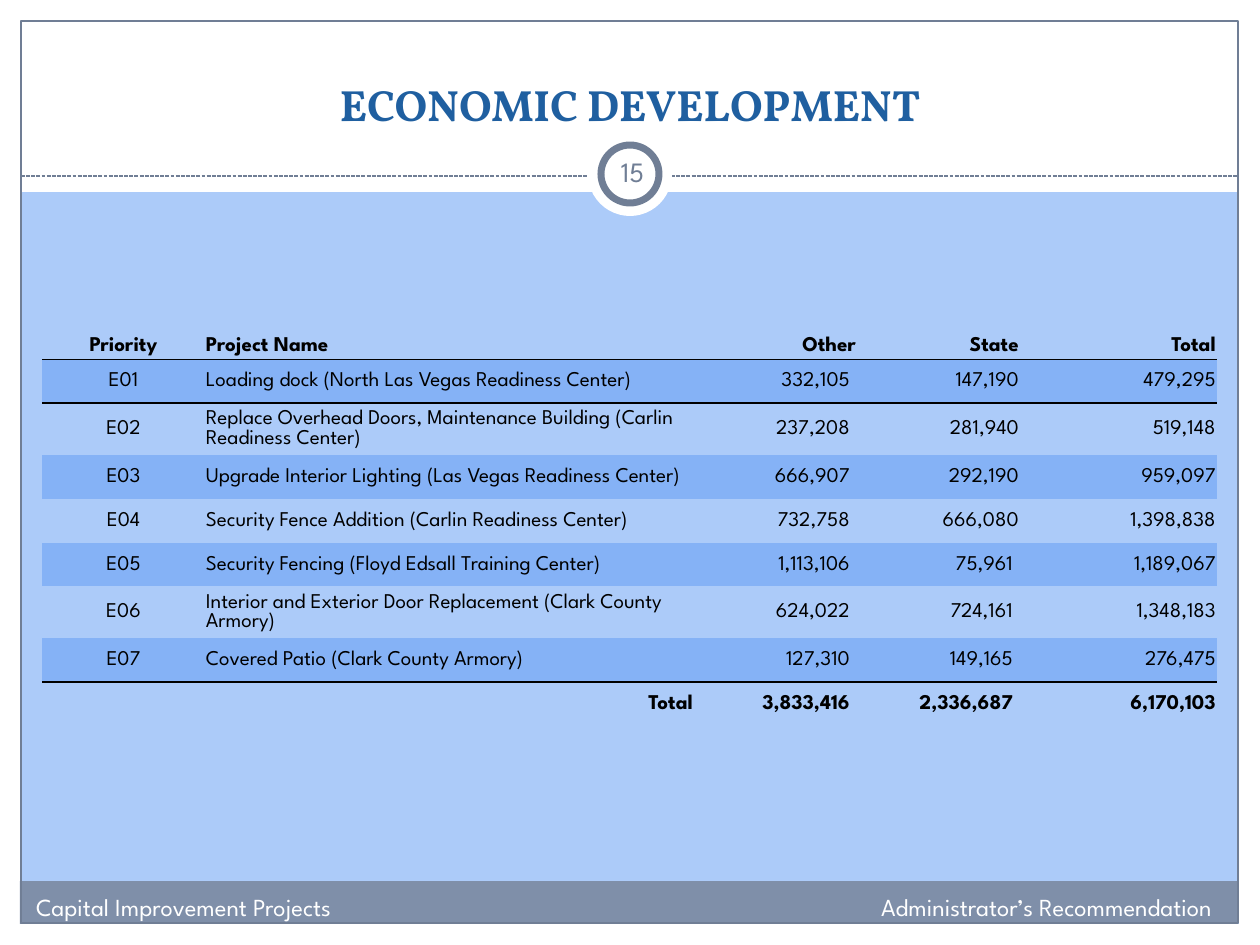
from lxml.etree import SubElement
from pptx import Presentation
from pptx.dml.color import RGBColor
from pptx.enum.dml import MSO_LINE
from pptx.enum.shapes import MSO_CONNECTOR, MSO_SHAPE
from pptx.enum.text import MSO_ANCHOR as Anchor, PP_ALIGN as Align
from pptx.oxml import parse_xml
from pptx.oxml.ns import nsdecls, qn
from pptx.util import Pt

SCALE = 914400 / 126
COLORS = {"sky": "ACCBF9", "band": "85B2F6", "white": "FFFFFF", "slate": "707E95",
          "footer": "7F8FA9", "title": "1F5FA0", "black": "000000"}
BODY_FONT, TITLE_FONT = "League Spartan", "Vollkorn"
PLAIN_GRID = "{2D5ABB26-0587-4C30-8999-92F81FD0307C}"

HEADER = ("Priority", "Project Name", "Other", "State", "Total")
PROJECTS = [
    ("E01", "Loading dock (North Las Vegas Readiness Center)", "332,105", "147,190", "479,295"),
    ("E02", "Replace Overhead Doors, Maintenance Building (Carlin Readiness Center)",
     "237,208", "281,940", "519,148"),
    ("E03", "Upgrade Interior Lighting (Las Vegas Readiness Center)",
     "666,907", "292,190", "959,097"),
    ("E04", "Security Fence Addition (Carlin Readiness Center)", "732,758", "666,080", "1,398,838"),
    ("E05", "Security Fencing (Floyd Edsall Training Center)", "1,113,106", "75,961", "1,189,067"),
    ("E06", "Interior and Exterior Door Replacement (Clark County Armory)",
     "624,022", "724,161", "1,348,183"),
    ("E07", "Covered Patio (Clark County Armory)", "127,310", "149,165", "276,475"),
]
TOTALS = ("", "Total", "3,833,416", "2,336,687", "6,170,103")
ROWS = [HEADER, *PROJECTS, TOTALS]
LAST = len(ROWS) - 1
COLUMN_WIDTHS = (163, 82, 81, 82, 81, 163, 163, 163, 197)
ROW_HEIGHTS = (25, 44, 51, 44, 44, 44, 51, 44, 44)
FIELD_COLUMNS = (0, 1, 6, 7, 8)
FIELD_ALIGNS = (Align.CENTER, Align.LEFT, Align.RIGHT, Align.RIGHT, Align.RIGHT)
INSET_STATE_ROWS = (5, 6, 7, 8)

PANELS = [
    (0, 924, 1260, 21, "white"),
    (0, 0, 1260, 192, "white"),
    (0, 0, 21, 945, "white"),
    (1239, 0, 21, 945, "white"),
    (20, 881, 1218, 43, "footer"),
]


def px(value):
    return round(value * SCALE)


def rgb(name):
    return RGBColor.from_string(COLORS[name])


def add_panel(slide, box, fill=None, line=None, width=0.75, kind=MSO_SHAPE.RECTANGLE):
    shape = slide.shapes.add_shape(kind, *map(px, box))
    shape.shadow.inherit = False
    if fill:
        shape.fill.solid()
        shape.fill.fore_color.rgb = rgb(fill)
    else:
        shape.fill.background()
    if line:
        shape.line.color.rgb = rgb(line)
        shape.line.width = Pt(width)
    else:
        shape.line.fill.background()


def write(frame, text, size=12, color="black", font=BODY_FONT, bold=False, align=Align.LEFT):
    paragraph = frame.paragraphs[0]
    paragraph.alignment = align
    paragraph.font.size = Pt(size)
    if text:
        run = paragraph.add_run()
        run.text = text
        run.font.size = Pt(size)
        run.font.name = font
        run.font.bold = bold
        run.font.color.rgb = rgb(color)


def add_text(slide, box, text, anchor=Anchor.TOP, margins=(13, 6, 13, 6), **style):
    frame = slide.shapes.add_textbox(*map(px, box)).text_frame
    frame.word_wrap = True
    frame.vertical_anchor = anchor
    (frame.margin_left, frame.margin_top,
     frame.margin_right, frame.margin_bottom) = map(px, margins)
    write(frame, text, **style)


def add_border(cell, side):
    border = parse_xml(
        f'<a:{side} {nsdecls("a")} w="12700"><a:solidFill>'
        f'<a:srgbClr val="{COLORS["black"]}"/></a:solidFill></a:{side}>')
    cell._tc.get_or_add_tcPr().insert(0, border)


def format_cell(cell, row):
    cell.margin_left = cell.margin_right = cell.margin_top = px(1)
    cell.margin_bottom = 0
    cell.vertical_anchor = Anchor.MIDDLE
    if row % 2:
        cell.fill.solid()
        cell.fill.fore_color.rgb = rgb("band")
    else:
        cell.fill.background()
    if row in (0, LAST - 1):
        add_border(cell, "lnB")
    if row in (1, LAST):
        add_border(cell, "lnT")
    cell.text_frame.paragraphs[0].font.size = Pt(12)


def add_project_table(slide):
    frame = slide.shapes.add_table(
        len(ROWS), len(COLUMN_WIDTHS), px(42), px(333),
        px(sum(COLUMN_WIDTHS)), px(sum(ROW_HEIGHTS)))
    table = frame.table
    table.first_row = table.horz_banding = False
    table._tbl.tblPr.find(qn("a:tableStyleId")).text = PLAIN_GRID
    for column, width in zip(table.columns, COLUMN_WIDTHS):
        column.width = px(width)
    for row, (values, height) in enumerate(zip(ROWS, ROW_HEIGHTS)):
        table.rows[row].height = px(height)
        for column in range(len(COLUMN_WIDTHS)):
            format_cell(table.cell(row, column), row)
        if row < LAST:
            table.cell(row, 1).merge(table.cell(row, 5))
        for field, (column, align) in enumerate(zip(FIELD_COLUMNS, FIELD_ALIGNS)):
            if row == LAST and field == 1:
                column, align = 5, Align.RIGHT
            cell = table.cell(row, column)
            if (field == 2 and row > 0) or (field == 3 and row in INSET_STATE_ROWS):
                cell.margin_right = px(7)
            write(cell.text_frame, values[field], bold=row in (0, LAST), align=align)


def main():
    presentation = Presentation()
    presentation.slide_width, presentation.slide_height = px(1260), px(945)
    slide = presentation.slides.add_slide(presentation.slide_layouts[6])
    slide.background.fill.solid()
    slide.background.fill.fore_color.rgb = rgb("sky")

    for *box, color in PANELS:
        add_panel(slide, box, color)
    add_panel(slide, (21, 21, 1217, 902), line="slate")

    divider = slide.shapes.add_connector(
        MSO_CONNECTOR.STRAIGHT, px(21), px(176), px(1238), px(176))
    divider.line.color.rgb = rgb("slate")
    divider.line.width = Pt(0.75)
    divider.line.dash_style = MSO_LINE.SQUARE_DOT
    SubElement(divider._element.spPr, qn("a:effectLst"))

    add_panel(slide, (588, 132, 84, 84), "white", kind=MSO_SHAPE.OVAL)
    add_panel(slide, (601, 145, 58, 58), "white", "slate", 4, MSO_SHAPE.OVAL)

    add_text(slide, (42, 32, 1176, 104), "ECONOMIC DEVELOPMENT", Anchor.BOTTOM,
             size=25, color="title", font=TITLE_FONT, bold=True, align=Align.CENTER)
    add_text(slide, (601, 141, 63, 60), "15", Anchor.MIDDLE, (6, 6, 6, 6),
             size=16, color="slate", align=Align.CENTER)
    add_text(slide, (-21, 886, 798, 43), "Capital Improvement Projects",
             margins=(57, 6, 13, 6), size=14, color="white")
    add_text(slide, (427, 886, 798, 43), "Administrator’s Recommendation",
             size=14, color="white", align=Align.RIGHT)
    add_project_table(slide)
    presentation.save("out.pptx")


if __name__ == "__main__":
    main()
